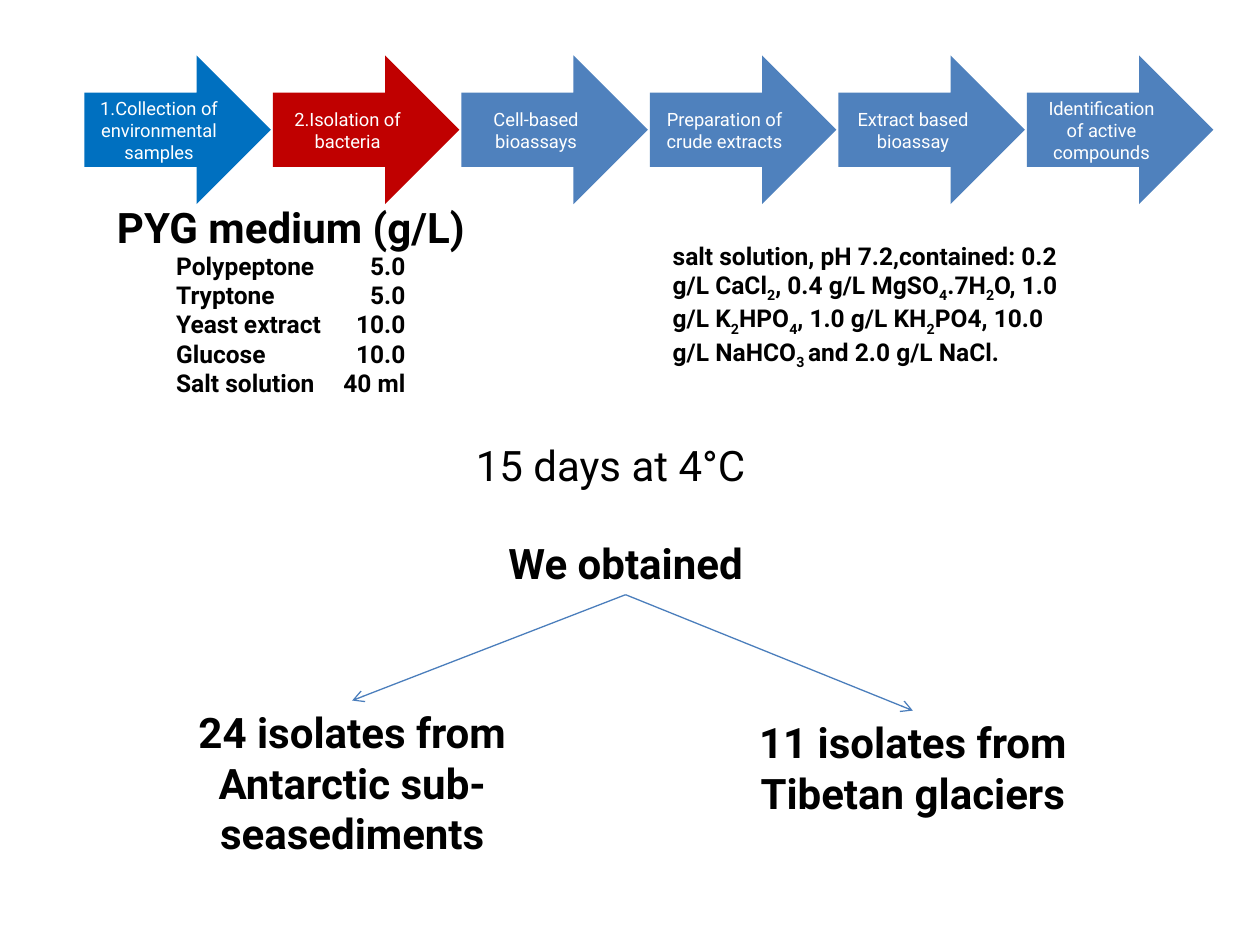
from lxml import etree
from pptx import Presentation
from pptx.dml.color import RGBColor
from pptx.enum.shapes import MSO_CONNECTOR, MSO_SHAPE
from pptx.enum.text import MSO_ANCHOR, MSO_AUTO_SIZE, PP_ALIGN
from pptx.oxml.ns import qn
from pptx.util import Inches, Pt

ARROW = MSO_SHAPE.RIGHT_ARROW
LINE = MSO_CONNECTOR.STRAIGHT
MIDDLE = MSO_ANCHOR.MIDDLE
GROW = MSO_AUTO_SIZE.SHAPE_TO_FIT_TEXT
LEFT, CENTER = PP_ALIGN.LEFT, PP_ALIGN.CENTER
TOP_SIDE, BOTTOM_SIDE = 0, 2

FONT = "Roboto"
BLACK = RGBColor(0x00, 0x00, 0x00)
WHITE = RGBColor(0xFF, 0xFF, 0xFF)
BLUE = RGBColor(0x00, 0x70, 0xC0)
RED = RGBColor(0xC0, 0x00, 0x00)
STEEL = RGBColor(0x4F, 0x81, 0xBD)
EDGE = RGBColor(0x4B, 0x7E, 0xBC)

STEPS = [
    ("1.Collection of environmental samples", BLUE),
    ("2.Isolation of bacteria", RED),
    ("Cell-based bioassays", STEEL),
    ("Preparation of crude extracts", STEEL),
    ("Extract based bioassay", STEEL),
    ("Identification of active compounds", STEEL),
]
RECIPE = [
    ("Polypeptone", "5.0"),
    ("Tryptone", "5.0"),
    ("Yeast extract", "10.0"),
    ("Glucose", "10.0"),
    ("Salt solution", "40 ml"),
]
SALTS = (
    "salt solution, pH 7.2,contained: 0.2 g/L CaCl|2|, 0.4 g/L MgSO|4|.7H|2|"
    "O, 1.0 g/L K|2|HPO|4|, 1.0 g/L KH|2|PO4, 10.0 g/L NaHCO|3 |"
    "and 2.0 g/L NaCl."
)


def add_run(para, text, size, color=BLACK, bold=False):
    run = para.add_run()
    run.text = text
    font = run.font
    font.name, font.size, font.bold = FONT, Pt(size), bold
    font.color.rgb = color
    return run


def add_box(slide, box):
    shape = slide.shapes.add_textbox(*map(Inches, box))
    shape.text_frame.word_wrap = True
    shape.text_frame.auto_size = GROW
    return shape


def add_label(slide, box, text, align=CENTER, bold=True):
    shape = add_box(slide, box)
    para = shape.text_frame.paragraphs[0]
    para.alignment = align
    add_run(para, text, 24, bold=bold)
    return shape


def add_steps(slide, box):
    left, top, width, height = box
    size = 1.48
    pitch = (width - size) / (len(STEPS) - 1)
    for i, (text, color) in enumerate(STEPS):
        place = (left + i * pitch, top, size, height)
        shape = slide.shapes.add_shape(ARROW, *map(Inches, place))
        shape.shadow.inherit = False
        shape.fill.solid()
        shape.fill.fore_color.rgb = color
        shape.line.fill.background()
        frame = shape.text_frame
        frame.word_wrap = True
        frame.vertical_anchor = MIDDLE
        para = frame.paragraphs[0]
        para.alignment = CENTER
        add_run(para, text, 10.5, WHITE)


def add_recipe(slide, box):
    frame = add_box(slide, box).text_frame
    for i, (name, amount) in enumerate(RECIPE):
        para = frame.add_paragraph() if i else frame.paragraphs[0]
        props = para._p.get_or_add_pPr()
        tabs = etree.SubElement(props, qn("a:tabLst"))
        etree.SubElement(tabs, qn("a:tab"), pos=str(Inches(1.82)), algn="r")
        add_run(para, f"{name}\t{amount}", 14, bold=True)


def add_salts(slide, box):
    para = add_box(slide, box).text_frame.paragraphs[0]
    for i, text in enumerate(SALTS.split("|")):
        run = add_run(para, text, 14, bold=True)
        if i % 2:
            run._r.get_or_add_rPr().set("baseline", "-25000")


def add_link(slide, start, end):
    link = slide.shapes.add_connector(LINE, 0, 0, 0, 0)
    link.begin_connect(start, BOTTOM_SIDE)
    link.end_connect(end, TOP_SIDE)
    link.line.color.rgb = EDGE
    link.line.width = Pt(0.75)
    etree.SubElement(link.line._get_or_add_ln(), qn("a:tailEnd"), type="arrow")
    etree.SubElement(link._element.spPr, qn("a:effectLst"))


def add_results(slide, box):
    left, top, width, height = box
    root = add_label(slide, (left + 2.13, top, 3.39, 0.5), "We obtained")
    sea = add_label(slide, (left, top + 1.34, 3.31, 1.31),
                    "24 isolates from Antarctic sub-seasediments")
    ice = add_label(slide, (left + width - 3.23, top + 1.42, 3.23, 0.91),
                    "11 isolates from Tibetan glaciers")
    for end in (ice, sea):
        add_link(slide, root, end)


def main():
    deck = Presentation()
    deck.slide_width, deck.slide_height = Inches(10), Inches(7.5)
    slide = deck.slides.add_slide(deck.slide_layouts[6])
    add_label(slide, (0.83, 1.55, 4.17, 0.5), "PYG medium (g/L)", LEFT)
    add_recipe(slide, (1.3, 1.94, 2.6, 1.28))
    add_salts(slide, (5.24, 1.86, 3.31, 1.28))
    add_label(slide, (1.3, 3.44, 7.09, 0.5), "15 days at 4°C", bold=False)
    add_results(slide, (1.14, 4.22, 7.72, 2.65))
    add_steps(slide, (0.67, 0.44, 8.96, 1.18))
    deck.save("out.pptx")


if __name__ == "__main__":
    main()
